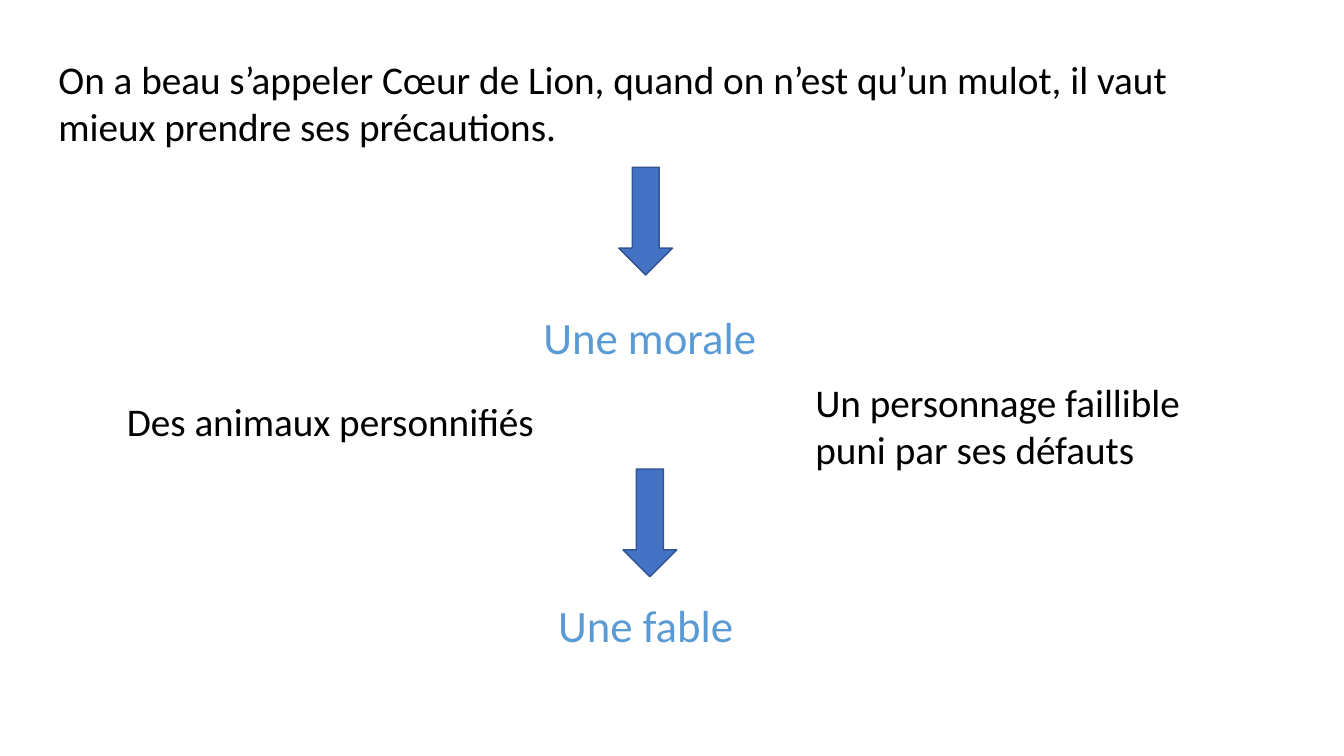
from dataclasses import dataclass

import pptx
import pptx.dml.color
import pptx.enum.shapes
import pptx.enum.text
import pptx.oxml
import pptx.oxml.ns
import pptx.util

Pt = pptx.util.Pt

COLOURS = {
    "text": "000000",
    "arrow": "4472C4",
    "arrow_edge": "325491",
    "deep_blue": "1F4E79",
    "blue": "5B9BD5",
    "light_blue": "9DC3E6",
}
KEYWORD_GRADIENT = [(0, "deep_blue"), (50, "blue"), (100, "light_blue")]
FONT = "Calibri"
ARROW_WIDTH, ARROW_HEIGHT = 38.4, 77


@dataclass
class Label:
    text: str
    left: float
    top: float
    width: float
    height: float
    is_keyword: bool = False


@dataclass
class Arrow:
    left: float
    top: float


LABELS = [
    Label("On a beau s’appeler Cœur de Lion, quand on n’est qu’un mulot, "
          "il vaut mieux prendre ses précautions.", 34.6, 36, 847.4, 75),
    Label("Une morale", 381, 217.4, 193.7, 46, is_keyword=True),
    Label("Des animaux personnifiés", 83.5, 280.1, 313.9, 41.2),
    Label("Un personnage faillible puni par ses défauts", 575.3, 266.6, 313.9, 75),
    Label("Une fable", 391.7, 423.4, 161.3, 46, is_keyword=True),
]
ARROWS = [Arrow(442, 119.5), Arrow(445, 335)]


def colour(name: str) -> pptx.dml.color.RGBColor:
    return pptx.dml.color.RGBColor.from_string(COLOURS[name])


def fill_with_gradient(span) -> None:
    """Give a run the vertical three-stop keyword gradient."""
    stops = "".join(
        f'<a:gs pos="{percent * 1000}"><a:srgbClr val="{COLOURS[name]}"/></a:gs>'
        for percent, name in KEYWORD_GRADIENT)
    gradient = pptx.oxml.parse_xml(
        f'<a:gradFill {pptx.oxml.ns.nsdecls("a")}><a:gsLst>{stops}</a:gsLst>'
        '<a:lin ang="5400000"/></a:gradFill>')
    span._r.get_or_add_rPr().insert(0, gradient)


def add_label(page, label: Label) -> None:
    box = page.shapes.add_textbox(
        Pt(label.left), Pt(label.top), Pt(label.width), Pt(label.height))
    frame = box.text_frame
    frame.text = label.text
    frame.word_wrap = True
    frame.auto_size = pptx.enum.text.MSO_AUTO_SIZE.SHAPE_TO_FIT_TEXT
    span = frame.paragraphs[0].runs[0]
    span.font.name = FONT
    span.font.size = Pt(32 if label.is_keyword else 28)
    if label.is_keyword:
        fill_with_gradient(span)
    else:
        span.font.color.rgb = colour("text")


def add_arrow(page, arrow: Arrow) -> None:
    shape = page.shapes.add_shape(
        pptx.enum.shapes.MSO_SHAPE.DOWN_ARROW,
        Pt(arrow.left), Pt(arrow.top), Pt(ARROW_WIDTH), Pt(ARROW_HEIGHT))
    shape.shadow.inherit = False
    shape.fill.solid()
    shape.fill.fore_color.rgb = colour("arrow")
    shape.line.color.rgb = colour("arrow_edge")
    shape.line.width = Pt(1)


def main() -> None:
    deck = pptx.Presentation()
    deck.slide_width, deck.slide_height = Pt(960), Pt(540)
    page = deck.slides.add_slide(deck.slide_layouts[6])
    for label in LABELS:
        add_label(page, label)
    for arrow in ARROWS:
        add_arrow(page, arrow)
    deck.save("out.pptx")


if __name__ == "__main__":
    main()
